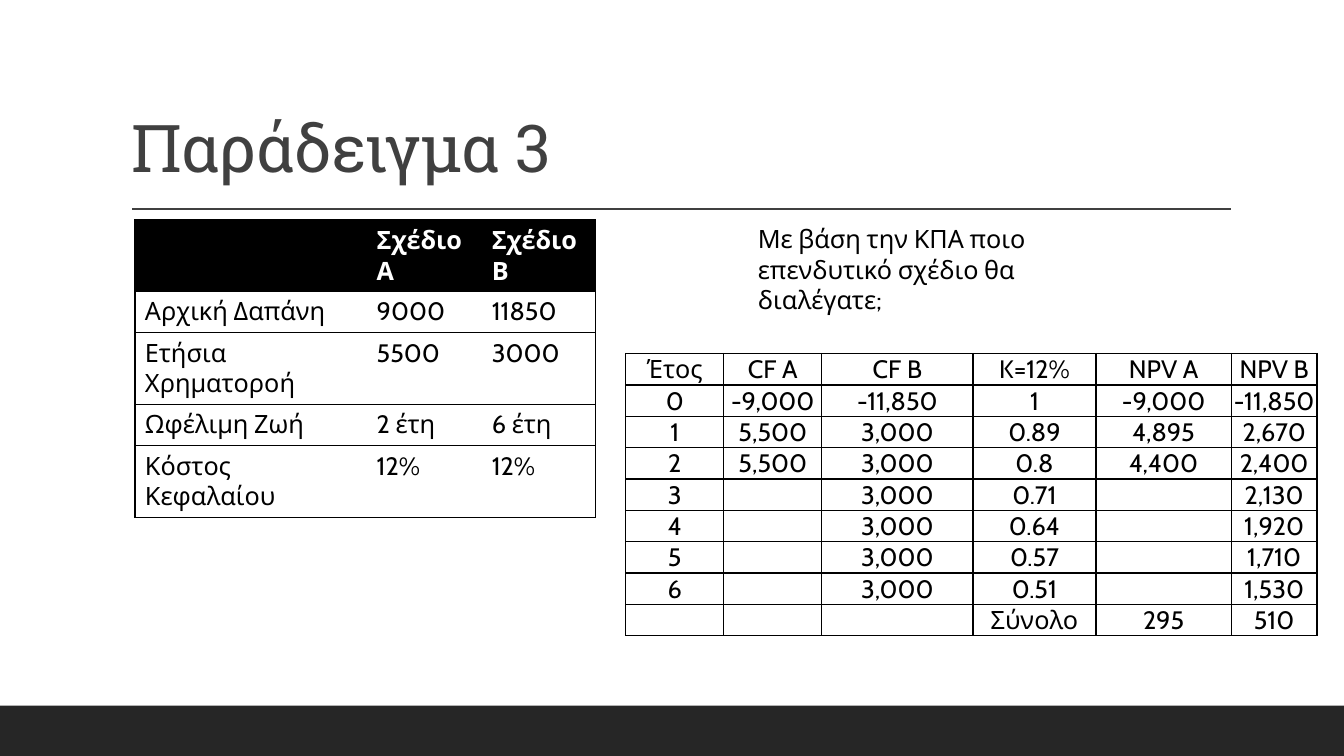
"""Build a slide comparing two investment plans by net present value."""
from dataclasses import dataclass

from lxml.etree import SubElement
from pptx import Presentation
from pptx.dml.color import RGBColor
from pptx.enum.shapes import MSO_CONNECTOR, MSO_SHAPE
from pptx.enum.text import MSO_ANCHOR, MSO_AUTO_SIZE, PP_ALIGN
from pptx.oxml import parse_xml
from pptx.oxml.ns import nsdecls, qn
from pptx.slide import Slide
from pptx.table import _Cell
from pptx.text.text import TextFrame
from pptx.util import Cm, Pt

COLORS = {"black": "000000", "white": "FFFFFF", "title": "404040", "footer": "262626"}


@dataclass
class TableSpec:
    """Content and format of one table, with lengths in centimetres."""
    left: float
    top: float
    widths: list[float]
    heights: list[float]
    rows: list[list[str]]
    header_fill: bool = False
    inner_verticals: bool = True
    compact: bool = False


PLANS = TableSpec(
    left=3.4, top=5.54, widths=[5.84, 2.9, 2.87], heights=[0.89] + [1.04] * 4,
    header_fill=True, inner_verticals=False,
    rows=[
        ["", "Σχέδιο Α", "Σχέδιο Β"],
        ["Αρχική Δαπάνη", "9000", "11850"],
        ["Ετήσια Χρηματοροή", "5500", "3000"],
        ["Ωφέλιμη Ζωή", "2 έτη", "6 έτη"],
        ["Κόστος Κεφαλαίου", "12%", "12%"],
    ],
)
CASH_FLOWS = TableSpec(
    left=15.77, top=8.91, widths=[2.47, 2.47, 3.81, 3.1, 3.41, 2.16],
    heights=[0.79] * 9, compact=True,
    rows=[
        ["Έτος", "CF A", "CF B", "K=12%", "NPV A", "NPV B"],
        ["0", "-9,000", "-11,850", "1", "-9,000", "-11,850"],
        ["1", "5,500", "3,000", "0.89", "4,895", "2,670"],
        ["2", "5,500", "3,000", "0.8", "4,400", "2,400"],
        ["3", "", "3,000", "0.71", "", "2,130"],
        ["4", "", "3,000", "0.64", "", "1,920"],
        ["5", "", "3,000", "0.57", "", "1,710"],
        ["6", "", "3,000", "0.51", "", "1,530"],
        ["", "", "", "Σύνολο", "295", "510"],
    ],
)


def write_text(frame: TextFrame, text: str, *, size: float = 18, font: str = "Cabin",
               color: str = "black", bold: bool = False,
               align: PP_ALIGN = PP_ALIGN.LEFT, line_spacing: float | None = None,
               tracking: float | None = None) -> None:
    """Write one formatted paragraph into a text frame."""
    paragraph = frame.paragraphs[0]
    paragraph.alignment = align
    paragraph.line_spacing = line_spacing
    run = paragraph.add_run()
    run.text = text
    run.font.size = Pt(size)
    run.font.name = font
    run.font.bold = bold
    run.font.color.rgb = RGBColor.from_string(COLORS[color])
    if tracking is not None:
        run.font._element.set("spc", str(round(tracking * 100)))


def set_borders(cell: _Cell, visible: dict[str, bool]) -> None:
    """Draw or suppress the borders of a cell, keyed by side L, R, T and B."""
    properties = cell._tc.get_or_add_tcPr()
    for position, (side, shown) in enumerate(visible.items()):
        line = parse_xml(f'<a:ln{side} {nsdecls("a")} w="{Pt(1)}"/>')
        if shown:
            fill = SubElement(line, qn("a:solidFill"))
            SubElement(fill, qn("a:srgbClr"), val=COLORS["black"])
        else:
            SubElement(line, qn("a:noFill"))
        properties.insert(position, line)


def add_grid(slide: Slide, grid: TableSpec) -> None:
    """Add a table with its borders, fills and text."""
    shape = slide.shapes.add_table(
        len(grid.rows), len(grid.widths), Cm(grid.left), Cm(grid.top),
        Cm(sum(grid.widths)), Cm(sum(grid.heights)))
    table = shape.table
    table.first_row = grid.header_fill
    table.horz_banding = False
    for column, width in zip(table.columns, grid.widths):
        column.width = Cm(width)
    for row, height in zip(table.rows, grid.heights):
        row.height = Cm(height)
    last_column = len(grid.widths) - 1
    for row_index, texts in enumerate(grid.rows):
        is_header = grid.header_fill and row_index == 0
        for column_index, text in enumerate(texts):
            cell = table.cell(row_index, column_index)
            if is_header:
                cell.fill.solid()
                cell.fill.fore_color.rgb = RGBColor.from_string(COLORS["black"])
            else:
                cell.fill.background()
            if grid.compact:
                cell.margin_left = cell.margin_right = cell.margin_top = Cm(0.02)
                cell.margin_bottom = Cm(0)
                cell.vertical_anchor = MSO_ANCHOR.BOTTOM
            set_borders(cell, {
                "L": grid.inner_verticals or column_index == 0,
                "R": grid.inner_verticals or column_index == last_column,
                "T": True,
                "B": True,
            })
            if text:
                write_text(cell.text_frame, text, bold=is_header,
                           color="white" if is_header else "black",
                           align=PP_ALIGN.CENTER if grid.compact else PP_ALIGN.LEFT)


def add_frame(slide: Slide, width: int) -> None:
    """Add the footer band and the rule below the title."""
    band = slide.shapes.add_shape(MSO_SHAPE.RECTANGLE, 0, Cm(17.78), width, Cm(1.27))
    band.shadow.inherit = False
    band.fill.solid()
    band.fill.fore_color.rgb = RGBColor.from_string(COLORS["footer"])
    band.line.fill.background()
    rule = slide.shapes.add_connector(
        MSO_CONNECTOR.STRAIGHT, Cm(3.33), Cm(5.27), Cm(31.01), Cm(5.27))
    rule.line.color.rgb = RGBColor.from_string(COLORS["title"])
    rule.line.width = Pt(1)
    SubElement(rule._element.spPr, qn("a:effectLst"))


def add_title(slide: Slide, text: str) -> None:
    """Place and format the title placeholder."""
    title = slide.shapes.title
    title.left, title.top, title.width, title.height = Cm(3.05), Cm(0.79), Cm(27.94), Cm(4.04)
    title.text_frame.vertical_anchor = MSO_ANCHOR.BOTTOM
    write_text(title.text_frame, text, size=47, font="Roboto Slab", color="title",
               line_spacing=0.9, tracking=-0.5)


def add_question(slide: Slide, text: str) -> None:
    """Add the question above the cash flow table."""
    box = slide.shapes.add_textbox(Cm(18.85), Cm(5.51), Cm(9.32), Cm(1.8))
    box.text_frame.word_wrap = True
    box.text_frame.auto_size = MSO_AUTO_SIZE.SHAPE_TO_FIT_TEXT
    write_text(box.text_frame, text)


def main() -> None:
    """Create and save the presentation."""
    presentation = Presentation()
    presentation.slide_width, presentation.slide_height = Cm(33.87), Cm(19.05)
    slide = presentation.slides.add_slide(presentation.slide_layouts[5])
    add_frame(slide, presentation.slide_width)
    add_title(slide, "Παράδειγμα 3")
    add_grid(slide, PLANS)
    add_question(slide, "Με βάση την ΚΠΑ ποιο επενδυτικό σχέδιο θα διαλέγατε;")
    add_grid(slide, CASH_FLOWS)
    presentation.save("out.pptx")


if __name__ == "__main__":
    main()
